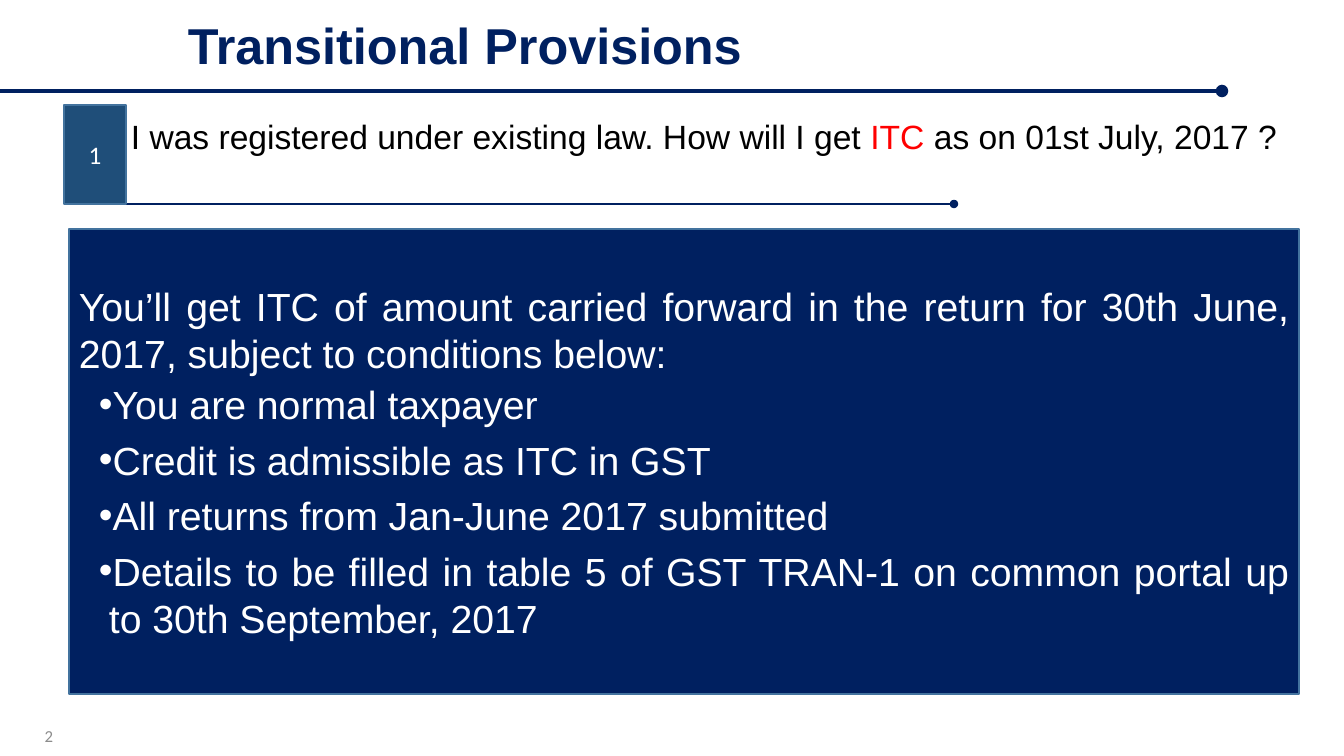
"""Build the slide on transitional provisions."""
from lxml.etree import SubElement
from pptx import Presentation
from pptx.dml.color import RGBColor
from pptx.enum.shapes import MSO_CONNECTOR, MSO_SHAPE
from pptx.enum.text import MSO_ANCHOR, PP_ALIGN
from pptx.oxml.ns import qn
from pptx.util import Emu, Pt

SCALE = 914400 / 100.8
COLORS = {
    "navy": "002060", "badge": "1F4E79", "edge": "43739E", "white": "FFFFFF",
    "black": "000000", "red": "FF0000", "grey": "8C8C8C",
}
TITLE = {"name": "Arial", "size": Pt(36), "bold": True}
ASK = {"name": "Arial", "size": Pt(24)}
BODY = {"name": "Arial", "size": Pt(28)}
LABEL = {"name": "Calibri", "size": Pt(18)}
FOOT = {"name": "Calibri", "size": Pt(12)}
LEAD = ("You’ll get ITC of amount carried forward in the return for "
        "30th June, 2017, subject to conditions below:")
TERMS = [
    "You are normal taxpayer",
    "Credit is admissible as ITC in GST",
    "All returns from Jan-June 2017 submitted",
    "Details to be filled in table 5 of GST TRAN-1 on common portal "
    "up to 30th September, 2017",
]


def px(*nums):
    """Turn pixel lengths into EMU."""
    return [Emu(round(num * SCALE)) for num in nums]


def tint(name):
    """Look up a colour by name."""
    return RGBColor.from_string(COLORS[name])


def apply(item, form):
    """Set each attribute of a format on an item."""
    for key, val in form.items():
        setattr(item, key, val)


def write(para, parts, form, align=PP_ALIGN.LEFT):
    """Fill a paragraph with coloured runs."""
    para.alignment = align
    for text, color in parts:
        run = para.add_run()
        run.text = text
        apply(run.font, form)
        run.font.color.rgb = tint(color)


def add_rule(slide, left, right, top, width):
    """Draw a level line that ends in a dot."""
    ends = px(left, top, right, top)
    rule = slide.shapes.add_connector(MSO_CONNECTOR.STRAIGHT, *ends)
    rule.line.color.rgb = tint("navy")
    rule.line.width = Pt(width)
    SubElement(rule.line._get_or_add_ln(), qn("a:tailEnd"), type="oval")
    SubElement(rule._element.spPr, qn("a:effectLst"))


def add_text(slide, place, parts, form, align=PP_ALIGN.LEFT,
             anchor=MSO_ANCHOR.TOP):
    """Place a wrapped line of text."""
    frame = slide.shapes.add_textbox(*px(*place)).text_frame
    apply(frame, {"word_wrap": True, "vertical_anchor": anchor})
    write(frame.paragraphs[0], parts, form, align)


def add_panel(slide, place, fill):
    """Draw a filled box and return its text frame."""
    box = slide.shapes.add_shape(MSO_SHAPE.RECTANGLE, *px(*place))
    box.shadow.inherit = False
    box.fill.solid()
    box.fill.fore_color.rgb = tint(fill)
    box.line.color.rgb = tint("edge")
    box.line.width = Pt(1)
    frame = box.text_frame
    apply(frame, {"word_wrap": True, "vertical_anchor": MSO_ANCHOR.MIDDLE})
    return frame


def add_term(frame, text):
    """Append a bulleted term to a frame."""
    para = frame.add_paragraph()
    write(para, [(text, "white")], BODY, PP_ALIGN.JUSTIFY)
    apply(para, {"space_before": Pt(3), "space_after": Pt(3)})
    props = para._p.get_or_add_pPr()
    left, hang = px(30, -10)
    props.set("marL", str(left))
    props.set("indent", str(hang))
    SubElement(props, qn("a:buFont"), typeface="Arial")
    SubElement(props, qn("a:buChar"), char="•")


def main():
    """Build and save the slide."""
    deck = Presentation()
    deck.slide_width, deck.slide_height = px(1344, 756)
    slide = deck.slides.add_slide(deck.slide_layouts[6])

    add_rule(slide, 0, 1222, 91, 3)
    add_text(slide, (178, 9, 838, 72),
             [("Transitional Provisions", "navy")], TITLE)

    add_rule(slide, 115, 954, 204, 2)
    badge = add_panel(slide, (64, 105, 62, 99), "badge")
    write(badge.paragraphs[0], [("1", "white")], LABEL, PP_ALIGN.CENTER)
    ask = [("I was registered under existing law. How will I get ", "black"),
           ("ITC", "red"), (" as on 01st July, 2017 ?", "black")]
    add_text(slide, (121, 111, 1200, 92), ask, ASK)

    reply = add_panel(slide, (69, 229, 1230, 465), "navy")
    write(reply.paragraphs[0], [(LEAD, "white")], BODY, PP_ALIGN.JUSTIFY)
    for term in TERMS:
        add_term(reply, term)

    add_text(slide, (0, 716, 63, 40), [("2", "grey")], FOOT,
             PP_ALIGN.RIGHT, MSO_ANCHOR.MIDDLE)
    deck.save("out.pptx")


if __name__ == "__main__":
    main()
